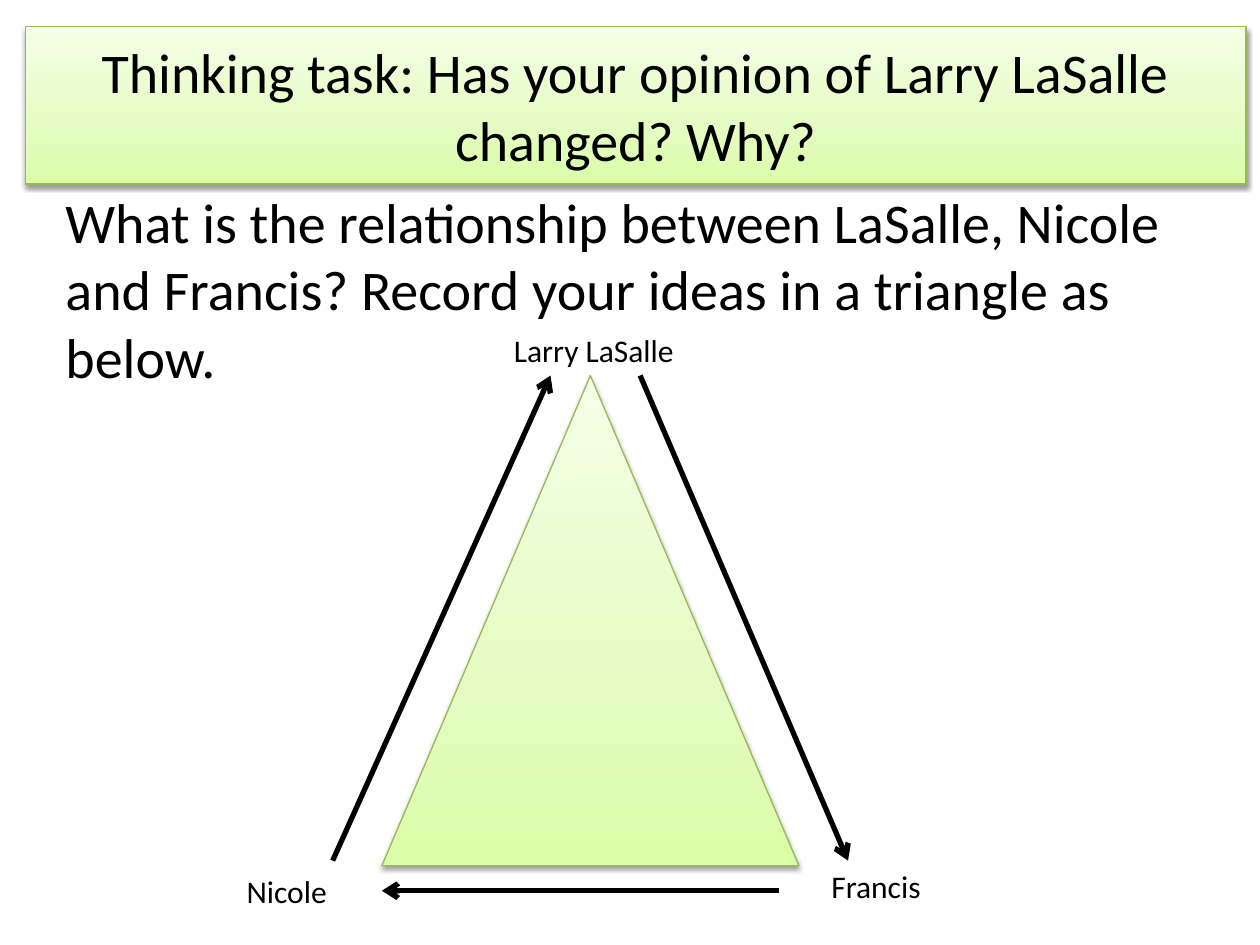
from lxml.etree import SubElement
from pptx import Presentation
from pptx.dml.color import RGBColor
from pptx.enum.shapes import MSO_CONNECTOR as Connector, MSO_SHAPE as Preset
from pptx.enum.text import MSO_ANCHOR as Anchor, MSO_AUTO_SIZE as AutoSize, PP_ALIGN as Align
from pptx.oxml.ns import qn
from pptx.util import Pt

TITLE = "Thinking task: Has your opinion of Larry LaSalle changed? Why?"
QUESTION = ("What is the relationship between LaSalle, Nicole and Francis? "
            "Record your ideas in a triangle as below.")
CHARACTERS = [("Larry LaSalle", 286.6, 185.8), ("Francis", 468, 491.8), ("Nicole", 133.9, 494.6)]

TITLE_BOX = (14.4, 15.1, 697.7, 90)
QUESTION_BOX = (30.2, 103.7, 648, 405.4)
TRIANGLE_BOX = (218.2, 214.6, 238.3, 280.1)
LABEL_SIZE = (136, 29)
APEX, FOOT, BASE = 214.6, 491.8, 509
RELATIONSHIPS = [
    ((365.8, APEX), (484.6, FOOT)),
    ((190.1, FOOT), (314.6, APEX)),
    ((445, BASE), (218.2, BASE)),
]

THEME = {
    "font": "Calibri",
    "ink": "000000",
    "outline": "98B955",
    "greens": [(0, "DAFDA7"), (35, "E4FCC2"), (100, "F5FFE7")],
    "large": 32,
    "label": 18,
    "outline_width": 0.75,
    "arrow_width": 3,
}


def place(part, box):
    part.left, part.top, part.width, part.height = map(Pt, box)


def write(part, text, size, align=Align.LEFT, anchor=Anchor.TOP, fit=AutoSize.NONE):
    frame = part.text_frame
    frame.text = text
    frame.word_wrap = True
    frame.auto_size = fit
    frame.vertical_anchor = anchor
    paragraph = frame.paragraphs[0]
    paragraph.alignment = align
    font = paragraph.runs[0].font
    font.name = THEME["font"]
    font.size = Pt(size)
    font.color.rgb = RGBColor.from_string(THEME["ink"])
    return paragraph


def add_color(parent, color):
    return SubElement(parent, qn("a:srgbClr"), val=color)


def style_green(part):
    part.fill.gradient()
    part.fill.gradient_angle = 90
    properties = part._element.spPr
    stops = properties.find(qn("a:gradFill")).find(qn("a:gsLst"))
    for stop in list(stops):
        stops.remove(stop)
    for percent, color in THEME["greens"]:
        add_color(SubElement(stops, qn("a:gs"), pos=str(percent * 1000)), color)
    part.line.color.rgb = RGBColor.from_string(THEME["outline"])
    part.line.width = Pt(THEME["outline_width"])
    part.shadow.inherit = False
    shadow = SubElement(properties.find(qn("a:effectLst")), qn("a:outerShdw"),
                        blurRad=str(Pt(3.1)), dist=str(Pt(1.6)), dir="5400000", rotWithShape="0")
    SubElement(add_color(shadow, THEME["ink"]), qn("a:alpha"), val="38000")


def add_arrow(slide, start, end):
    arrow = slide.shapes.add_connector(Connector.STRAIGHT, *map(Pt, start + end))
    arrow.line.color.rgb = RGBColor.from_string(THEME["ink"])
    arrow.line.width = Pt(THEME["arrow_width"])
    SubElement(arrow.line._get_or_add_ln(), qn("a:tailEnd"), type="arrow")
    SubElement(arrow._element.spPr, qn("a:effectLst"))


def main():
    deck = Presentation()
    deck.slide_width, deck.slide_height = Pt(720), Pt(540)
    slide = deck.slides.add_slide(deck.slide_layouts[1])

    title, question = slide.placeholders
    place(title, TITLE_BOX)
    style_green(title)
    write(title, TITLE, THEME["large"], align=Align.CENTER, anchor=Anchor.MIDDLE)

    place(question, QUESTION_BOX)
    paragraph = write(question, QUESTION, THEME["large"])
    bullet = paragraph._p.get_or_add_pPr()
    bullet.set("marL", "0")
    bullet.set("indent", "0")
    SubElement(bullet, qn("a:buNone"))

    triangle = slide.shapes.add_shape(Preset.ISOSCELES_TRIANGLE, *map(Pt, TRIANGLE_BOX))
    style_green(triangle)

    for name, left, top in CHARACTERS:
        label = slide.shapes.add_textbox(*map(Pt, (left, top, *LABEL_SIZE)))
        write(label, name, THEME["label"], fit=AutoSize.SHAPE_TO_FIT_TEXT)

    for start, end in RELATIONSHIPS:
        add_arrow(slide, start, end)

    deck.save("out.pptx")


if __name__ == "__main__":
    main()
